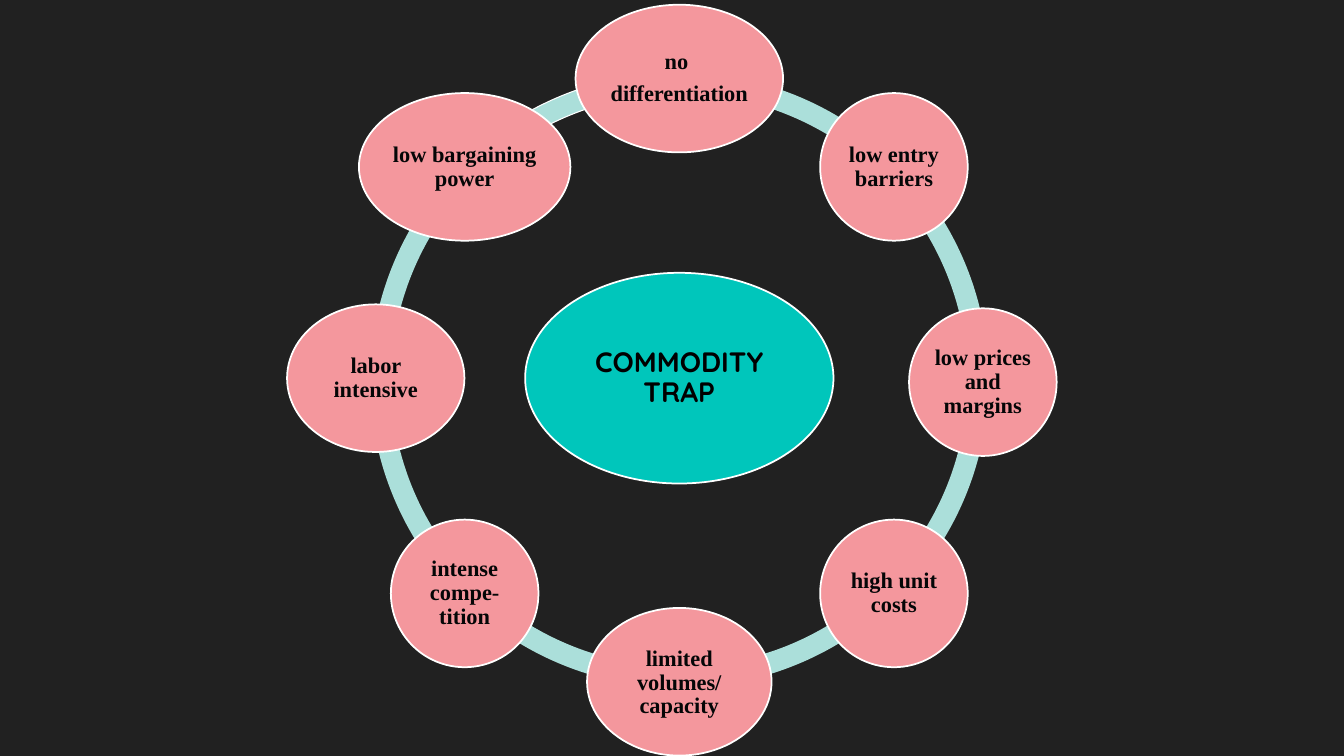
from dataclasses import dataclass
from math import cos, radians, sin

from pptx import Presentation
from pptx.dml.color import RGBColor
from pptx.enum.shapes import MSO_SHAPE as SHAPE
from pptx.enum.text import MSO_ANCHOR as ANCHOR, PP_ALIGN as ALIGN
from pptx.util import Cm, Pt


@dataclass(frozen=True)
class Theme:
    background: str = "212121"
    ring: str = "ABDFDA"
    hub: str = "00C6BB"
    node: str = "F4979D"
    outline: str = "FFFFFF"
    hub_text: str = "000000"
    node_text: str = "050607"
    hub_font: str = "Quicksand"
    node_font: str = "Times New Roman"
    hub_size: int = 20
    node_size: int = 16
    outline_width: float = 1.25
    arc_outline_width: float = 0.75
    line_spacing: float = 0.9
    space_after: float = 0.35  # share of the type size


THEME = Theme()
STEP = 45          # degrees between neighbouring nodes
ARC_UNIT = 0.6     # adjustment units per degree of arc
NODE_SIZE = 3.72   # height of every node, width of the round ones

# Clockwise from the top: paragraphs, width, vertical nudge
NODES = [
    (["no ", "differentiation"], 5.23, 0),
    (["low entry barriers"], NODE_SIZE, 0),
    (["low prices and margins"], NODE_SIZE, 0.05),
    (["high unit costs"], NODE_SIZE, 0),
    (["limited volumes/", "capacity"], 4.65, 0),
    (["intense compe-tition"], NODE_SIZE, 0),
    (["labor intensive"], 4.47, -0.05),
    (["low bargaining power"], 5.33, 0),
]
TIGHT_LINES = {"capacity": 0.5}


def add_centred(shapes, kind, cx, cy, width, height, fill, outline=0):
    """Add a filled shape around a centre point given in centimetres."""
    sp = shapes.add_shape(kind, Cm(cx - width / 2), Cm(cy - height / 2),
                          Cm(width), Cm(height))
    sp.shadow.inherit = False
    sp.fill.solid()
    sp.fill.fore_color.rgb = RGBColor.from_string(fill)
    if outline:
        sp.line.color.rgb = RGBColor.from_string(THEME.outline)
        sp.line.width = Pt(outline)
    else:
        sp.line.fill.background()
    return sp


def write(sp, lines, font, size, color, inset):
    tf = sp.text_frame
    tf.word_wrap = True
    tf.vertical_anchor = ANCHOR.MIDDLE
    tf.margin_left = tf.margin_right = Cm(inset)
    tf.margin_top = tf.margin_bottom = Cm(inset)
    for i, line in enumerate(lines):
        p = tf.add_paragraph() if i else tf.paragraphs[0]
        p.text = line
        p.alignment = ALIGN.CENTER
        p.line_spacing = TIGHT_LINES.get(line, THEME.line_spacing)
        p.space_after = Pt(size * THEME.space_after)
        p.font.name = font
        p.font.size = Pt(size)
        p.font.bold = True
        p.font.color.rgb = RGBColor.from_string(color)


def add_ring(shapes, cx, cy, size):
    """Eight arcs; the lower half sits slightly higher than the upper."""
    for start in range(0, 360, STEP):
        nudge = 0.05 if start >= 180 else -0.05
        outline = THEME.arc_outline_width if start == 225 else 0
        arc = add_centred(shapes, SHAPE.BLOCK_ARC, cx, cy + nudge, size, size,
                          THEME.ring, outline)
        arc.adjustments[0] = start * ARC_UNIT
        arc.adjustments[1] = (start + STEP) * ARC_UNIT
        arc.adjustments[2] = 0.034


def add_hub(shapes, cx, cy, width, height):
    hub = add_centred(shapes, SHAPE.OVAL, cx, cy, width, height,
                      THEME.hub, THEME.outline_width)
    write(hub, ["COMMODITY TRAP"], THEME.hub_font, THEME.hub_size,
          THEME.hub_text, 0.08)


def add_nodes(shapes, cx, cy, rx, ry):
    for i, (lines, width, nudge) in enumerate(NODES):
        angle = radians(i * STEP - 90)
        node = add_centred(shapes, SHAPE.OVAL, cx + rx * cos(angle),
                           cy + ry * sin(angle) + nudge, width, NODE_SIZE,
                           THEME.node, THEME.outline_width)
        write(node, lines, THEME.node_font, THEME.node_size,
              THEME.node_text, 0.05)


def add_cycle(slide, left, top, width, height):
    """Place the whole cycle in the given box."""
    shapes = slide.shapes.add_group_shape().shapes
    cx, cy = left + width / 2, top + height / 2
    add_ring(shapes, cx, cy, 15.6)
    add_hub(shapes, cx, cy - 0.05, 7.77, 5.31)
    add_nodes(shapes, cx, cy, 7.65, (height - NODE_SIZE) / 2)


def main():
    prs = Presentation()
    prs.slide_width, prs.slide_height = Cm(33.87), Cm(19.05)
    slide = prs.slides.add_slide(prs.slide_layouts[6])
    background = slide.background.fill
    background.solid()
    background.fore_color.rgb = RGBColor.from_string(THEME.background)
    add_cycle(slide, 7.22, 0.12, 19.8, 18.92)
    prs.save("out.pptx")


if __name__ == "__main__":
    main()
